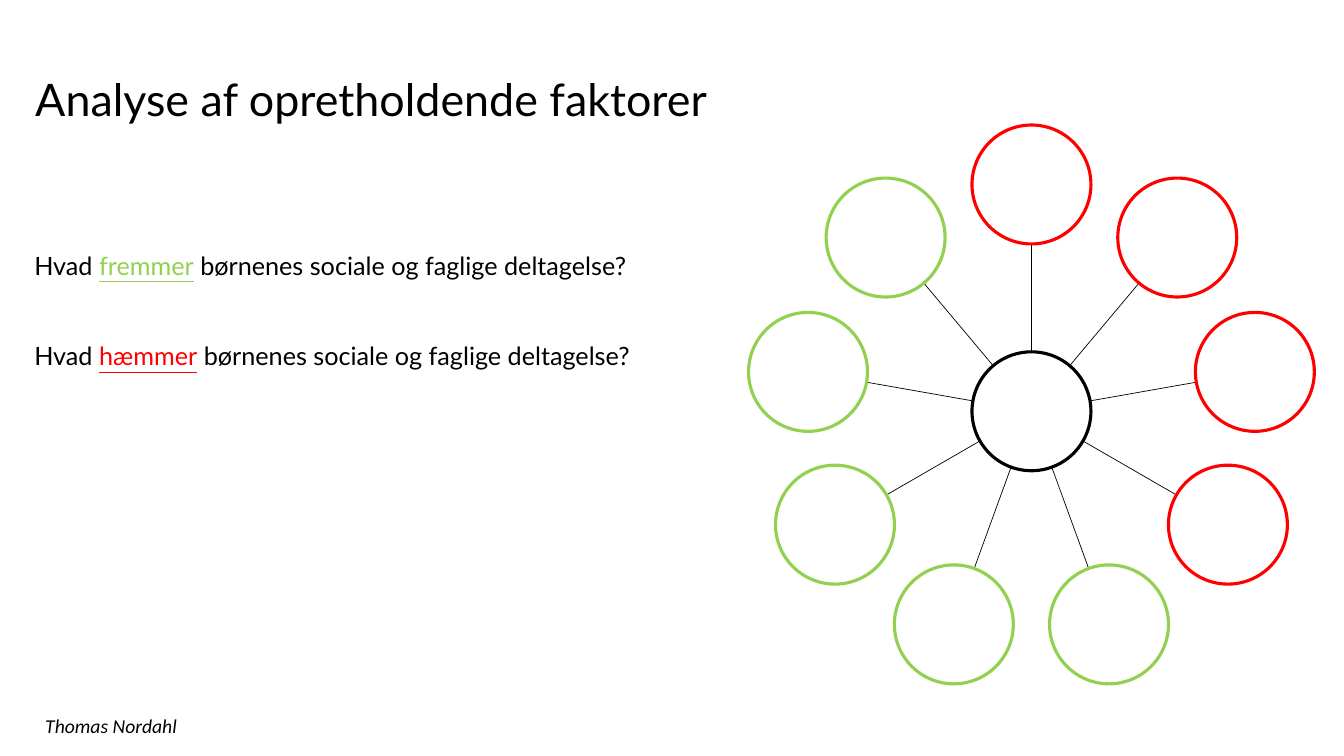
from math import cos, radians, sin

from lxml import etree
from pptx import Presentation
from pptx.dml.color import RGBColor
from pptx.enum.shapes import MSO_CONNECTOR, MSO_SHAPE
from pptx.oxml.ns import qn
from pptx.util import Inches, Pt

OVAL = MSO_SHAPE.OVAL
STRAIGHT = MSO_CONNECTOR.STRAIGHT
BLACK = RGBColor(0x00, 0x00, 0x00)
WHITE = RGBColor(0xFF, 0xFF, 0xFF)
RED = RGBColor(0xFF, 0x00, 0x00)
GREEN = RGBColor(0x92, 0xD0, 0x50)


def add_frame(slide, box, inset=True):
    frame = slide.shapes.add_textbox(*map(Inches, box)).text_frame
    frame.word_wrap = True
    if not inset:
        frame.margin_left = frame.margin_right = 0
        frame.margin_top = frame.margin_bottom = 0
    return frame


def set_font(para, name, size, italic=False):
    font = para.font
    font.name, font.size, font.italic = name, Pt(size), italic
    font.color.rgb = BLACK


def add_title(slide, box):
    para = add_frame(slide, box, inset=False).paragraphs[0]
    para.text = "Analyse af opretholdende faktorer"
    set_font(para, "Lato", 32)


def add_questions(slide, box):
    frame = add_frame(slide, box, inset=False)
    for i, (verb, color) in enumerate([("fremmer", GREEN), ("hæmmer", RED)]):
        para = frame.add_paragraph() if i else frame.paragraphs[0]
        if i:
            para.space_before = Pt(43.2)
        set_font(para, "Lato", 18)
        para.add_run().text = "Hvad "
        key = para.add_run()
        key.text = verb
        key.font.underline = True
        key.font.color.rgb = color
        para.add_run().text = " børnenes sociale og faglige deltagelse?"


def add_credit(slide, box):
    para = add_frame(slide, box).paragraphs[0]
    para.text = "Thomas Nordahl"
    set_font(para, "Calibri", 14, italic=True)


def add_circle(slide, x, y, size, color):
    circle = slide.shapes.add_shape(
        OVAL, Inches(x - size / 2), Inches(y - size / 2), Inches(size), Inches(size))
    circle.shadow.inherit = False
    circle.fill.solid()
    circle.fill.fore_color.rgb = WHITE
    circle.line.color.rgb = color
    circle.line.width = Pt(2.25)


def add_spoke(slide, start, end):
    spoke = slide.shapes.add_connector(STRAIGHT, *map(Inches, start + end))
    spoke.line.color.rgb = BLACK
    spoke.line.width = Pt(0.5)
    etree.SubElement(spoke._element.spPr, qn("a:effectLst"))


def add_wheel(slide, x, y, reach, size):
    def spot(dist, angle):
        return x + dist * cos(angle), y + dist * sin(angle)

    add_circle(slide, x, y, size, BLACK)
    colors = [RED] * 4 + [GREEN] * 5
    for i, color in enumerate(colors):
        angle = radians(360 * i / len(colors) - 90)
        add_spoke(slide, spot(size / 2, angle), spot(reach - size / 2, angle))
        add_circle(slide, *spot(reach, angle), size, color)


def main():
    deck = Presentation()
    deck.slide_width, deck.slide_height = Inches(13.33), Inches(7.5)
    slide = deck.slides.add_slide(deck.slide_layouts[6])
    add_questions(slide, (0.34, 2.48, 6.21, 2.42))
    add_wheel(slide, 10.23, 4.08, 2.25, 1.18)
    add_title(slide, (0.35, 0.71, 10.46, 0.54))
    add_credit(slide, (0.35, 7.03, 2.39, 0.34))
    deck.save("out.pptx")


if __name__ == "__main__":
    main()
